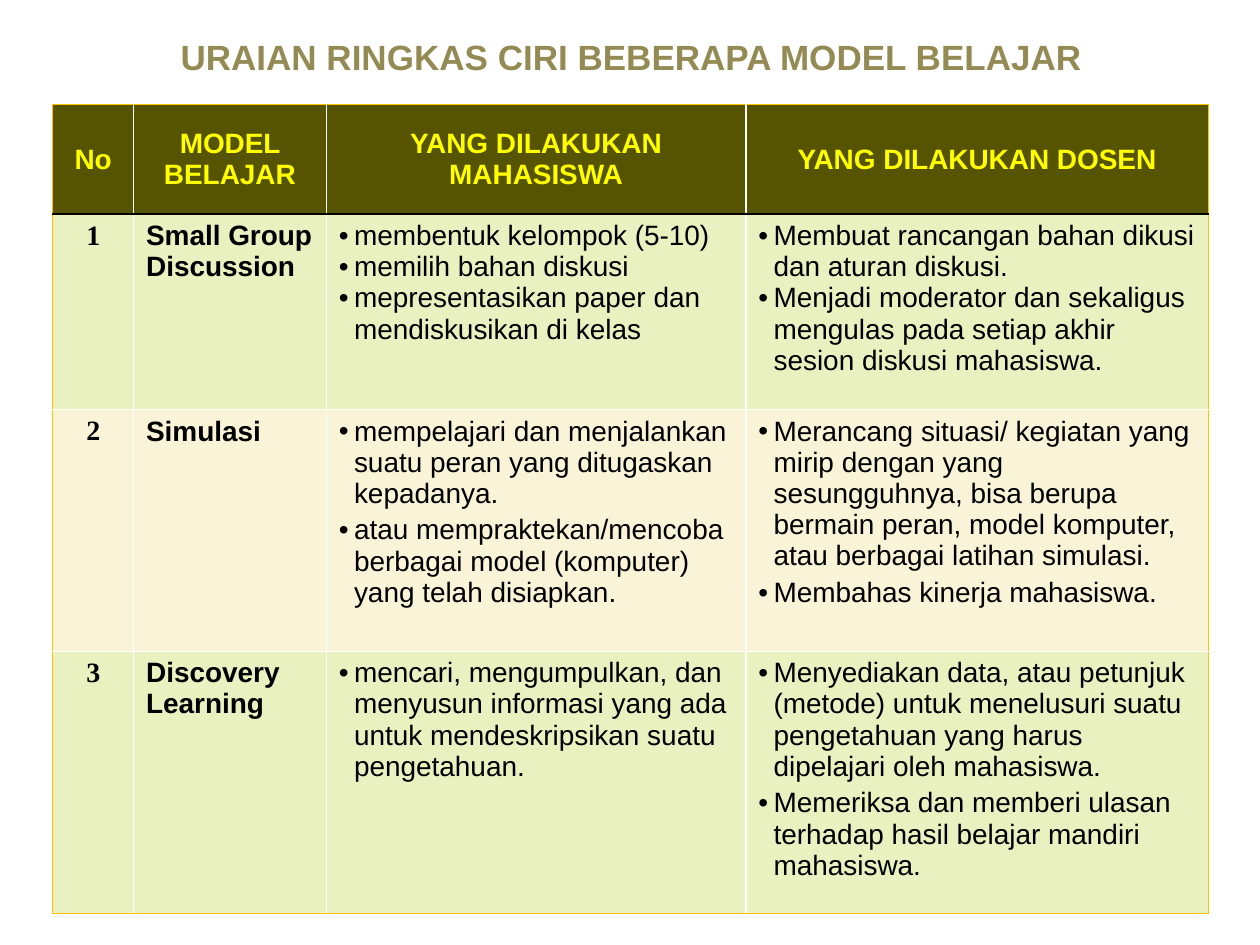
from dataclasses import dataclass
from lxml.etree import SubElement
from pptx import Presentation
from pptx.dml.color import RGBColor as Rgb
from pptx.enum.text import MSO_ANCHOR as Anchor, MSO_AUTO_SIZE as Fit, PP_ALIGN as Align
from pptx.oxml.ns import qn
from pptx.util import Emu, Inches, Pt

HUES = {
    "head": "565400", "label": "FFFF00", "odd": "EAF1C1", "even": "F9F3D7",
    "text": "000000", "title": "948A54", "grid": "FFFFFF", "edge": "FFC000",
}
WIDE, HIGH = Inches(10), Inches(7.5)
COLS = (6.4, 15.3, 33.3, 36.7)
ROWS = (11.6, 20.67, 25.6, 27.73)
HEADS = ("No", "MODEL BELAJAR", "YANG DILAKUKAN MAHASISWA", "YANG DILAKUKAN DOSEN")


@dataclass
class Model:
    name: str
    student: tuple[str, ...]
    teacher: tuple[str, ...]
    gap: float = 3.2


@dataclass
class Style:
    color: str = "text"
    face: str = "Arial"
    size: float = 16
    bold: bool = True
    align: Align = Align.LEFT
    bullet: bool = False
    gap: float = 0


MODELS = (
    Model(
        "Small Group Discussion",
        ("membentuk kelompok (5-10)", "memilih bahan diskusi",
         "mepresentasikan paper dan mendiskusikan di kelas"),
        ("Membuat rancangan bahan dikusi dan aturan diskusi.",
         "Menjadi moderator dan sekaligus mengulas pada setiap akhir sesion diskusi mahasiswa."),
        gap=0,
    ),
    Model(
        "Simulasi",
        ("mempelajari dan menjalankan suatu peran yang ditugaskan kepadanya.",
         "atau mempraktekan/mencoba berbagai model (komputer) yang telah disiapkan."),
        ("Merancang situasi/ kegiatan yang mirip dengan yang sesungguhnya, bisa berupa "
         "bermain peran, model komputer, atau berbagai latihan simulasi.",
         "Membahas kinerja mahasiswa."),
    ),
    Model(
        "Discovery Learning",
        ("mencari, mengumpulkan, dan menyusun informasi yang ada untuk mendeskripsikan "
         "suatu pengetahuan.",),
        ("Menyediakan data, atau petunjuk (metode) untuk menelusuri suatu pengetahuan "
         "yang harus dipelajari oleh mahasiswa.",
         "Memeriksa dan memberi ulasan terhadap hasil belajar mandiri mahasiswa."),
    ),
)


def across(share: float) -> Emu:
    return Emu(round(WIDE * share / 100))


def down(share: float) -> Emu:
    return Emu(round(HIGH * share / 100))


def hue(name: str) -> Rgb:
    return Rgb.from_string(HUES[name])


def add_dot(para) -> None:
    props = para._p.get_or_add_pPr()
    props.set("marL", str(Inches(0.12)))
    props.set("indent", str(-Inches(0.12)))
    SubElement(props, qn("a:buFont")).set("typeface", "Arial")
    SubElement(props, qn("a:buChar")).set("char", "•")


def write(frame, lines: tuple[str, ...], style: Style) -> None:
    frame.text = "\n".join(lines)
    for num, para in enumerate(frame.paragraphs):
        if style.bullet:
            add_dot(para)
        para.alignment = style.align
        para.space_before = Pt(style.gap if num else 0)
        for run in para.runs:
            font = run.font
            font.name, font.size, font.bold = style.face, Pt(style.size), style.bold
            font.color.rgb = hue(style.color)


def add_line(cell, side: str, color: str, width: float) -> None:
    line = SubElement(cell._tc.get_or_add_tcPr(), qn(f"a:ln{side}"))
    line.set("w", str(Pt(width)))
    fill = SubElement(line, qn("a:solidFill"))
    SubElement(fill, qn("a:srgbClr")).set("val", HUES[color])


def frame_cell(cell, row: int, col: int) -> None:
    rim, rule, thick = ("edge", 0.75), ("grid", 1), ("text", 1.5)
    last = len(ROWS) - 1
    add_line(cell, "L", *(rim if col == 0 else rule))
    add_line(cell, "R", *(rim if col == len(COLS) - 1 else rule))
    add_line(cell, "T", *{0: rim, 1: thick}.get(row, rule))
    add_line(cell, "B", *{0: thick, last: rim}.get(row, rule))


def fill_cell(cell, row: int, col: int, lines: tuple[str, ...], style: Style) -> None:
    frame_cell(cell, row, col)
    cell.fill.solid()
    cell.fill.fore_color.rgb = hue("head" if row == 0 else "odd" if row % 2 else "even")
    cell.vertical_anchor = Anchor.TOP if row else Anchor.MIDDLE
    write(cell.text_frame, lines, style)


def add_title(slide) -> None:
    title = slide.shapes.title
    title.left, title.top = across(5.5), down(3.07)
    title.width, title.height = across(89.2), down(5.87)
    frame = title.text_frame
    frame.word_wrap = True
    frame.auto_size = Fit.SHAPE_TO_FIT_TEXT
    frame.vertical_anchor = Anchor.TOP
    write(frame, ("URAIAN RINGKAS CIRI BEBERAPA MODEL BELAJAR",),
          Style("title", size=20, align=Align.CENTER))


def add_grid(slide) -> None:
    shape = slide.shapes.add_table(
        len(ROWS), len(COLS), across(4.2), down(11.07), across(sum(COLS)), down(sum(ROWS)))
    table = shape.table
    for col, share in zip(table.columns, COLS):
        col.width = across(share)
    for row, share in zip(table.rows, ROWS):
        row.height = down(share)
    for col, text in enumerate(HEADS):
        fill_cell(table.cell(0, col), 0, col, (text,), Style("label", align=Align.CENTER))
    for row, model in enumerate(MODELS, 1):
        points = Style(bold=False, bullet=True, gap=model.gap)
        parts = (
            ((str(row),), Style(face="Times New Roman", align=Align.CENTER)),
            ((model.name,), Style()),
            (model.student, points),
            (model.teacher, points),
        )
        for col, (lines, style) in enumerate(parts):
            fill_cell(table.cell(row, col), row, col, lines, style)


def main() -> None:
    deck = Presentation()
    deck.slide_width, deck.slide_height = WIDE, HIGH
    slide = deck.slides.add_slide(deck.slide_layouts[5])
    add_title(slide)
    add_grid(slide)
    deck.save("out.pptx")


if __name__ == "__main__":
    main()
